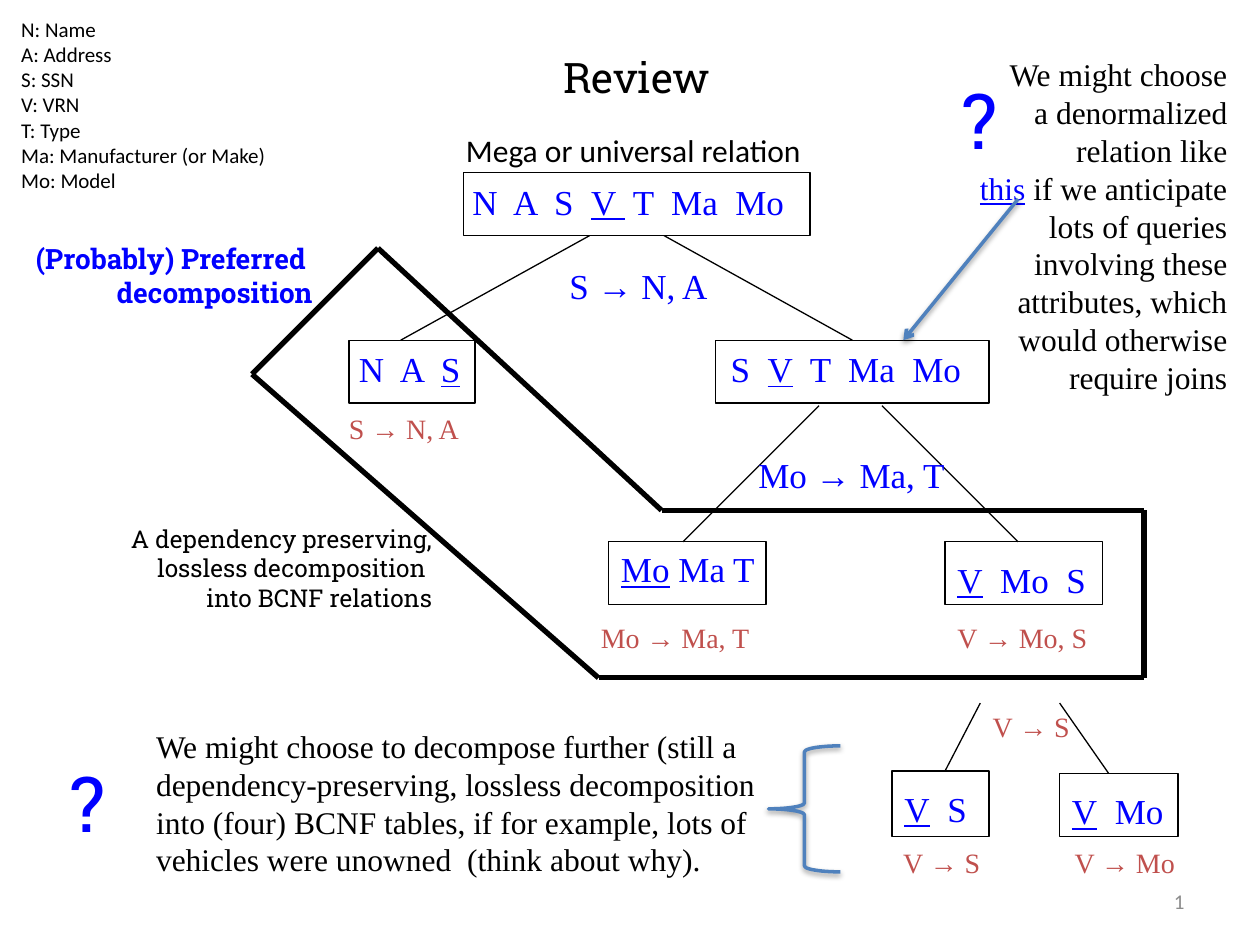
from lxml import etree
from pptx import Presentation
from pptx.dml.color import RGBColor
from pptx.enum.shapes import MSO_CONNECTOR as Connector, MSO_SHAPE as Shape
from pptx.enum.text import MSO_ANCHOR as Anchor, MSO_AUTO_SIZE as AutoSize, PP_ALIGN as Align
from pptx.oxml.ns import qn
from pptx.util import Emu, Pt

SCALE = 9144
BLACK, BLUE, RED, STEEL, GREY = "000000", "0000FF", "C0504D", "4F81BD", "8C8C8C"
SERIF, SLAB, SANS = "Times New Roman", "Roboto Slab", "Calibri"


def px(length):
    """Turn px into EMU."""
    return Emu(round(length * SCALE))


def paint(color_format, color):
    """Set a hex colour on a font colour or a line colour."""
    color_format.rgb = RGBColor.from_string(color)


def set_effect(shape, shadow=False):
    """Replace the theme shadow with a soft one or with none."""
    effects = etree.SubElement(shape._element.spPr, qn("a:effectLst"))
    if shadow:
        outer = etree.SubElement(effects, qn("a:outerShdw"), blurRad="40000",
                                 dist="20000", dir="5400000", rotWithShape="0")
        tone = etree.SubElement(outer, qn("a:srgbClr"), val=BLACK)
        etree.SubElement(tone, qn("a:alpha"), val="38000")


def add_text(slide, box, lines, size, font, color=BLACK, align=Align.LEFT,
             bold=False, wrap=False):
    """Add a text box; parts between underscores are underlined key names."""
    textbox = slide.shapes.add_textbox(*map(px, box))
    frame = textbox.text_frame
    frame.word_wrap = wrap
    frame.auto_size = AutoSize.SHAPE_TO_FIT_TEXT
    for number, line in enumerate(lines):
        paragraph = frame.add_paragraph() if number else frame.paragraphs[0]
        paragraph.alignment = align
        for part, words in enumerate(line.split("_")):
            if not words:
                continue
            run = paragraph.add_run()
            run.text = words
            is_key = part % 2 == 1
            run.font.size, run.font.name = Pt(size), font
            run.font.bold, run.font.underline = bold, is_key
            paint(run.font.color, BLUE if is_key else color)
    return textbox


def add_line(slide, start, end, color=BLACK, width=0.75, shadow=False):
    """Draw a straight connector between two points."""
    line = slide.shapes.add_connector(Connector.STRAIGHT, *map(px, (*start, *end)))
    paint(line.line.color, color)
    line.line.width = Pt(width)
    set_effect(line, shadow)
    return line


def add_outline(slide, preset, box, color=BLACK, width=0.75, shadow=False):
    """Draw an unfilled preset shape."""
    outline = slide.shapes.add_shape(preset, *map(px, box))
    outline.fill.background()
    paint(outline.line.color, color)
    outline.line.width = Pt(width)
    set_effect(outline, shadow)
    return outline


def add_relation(slide, box, attributes, dx, dy, text_width):
    """Draw a relation's rectangle with its attributes."""
    x, y, _, _ = box
    add_text(slide, (x + dx, y + dy, text_width, 43), [attributes], 20, SERIF, BLUE)
    return add_outline(slide, Shape.RECTANGLE, box)


def add_dependencies(slide, x, y, rows, size, color, height):
    """Write functional dependencies at offsets from a corner."""
    for dx, dy, width, dependency in rows:
        add_text(slide, (x + dx, y + dy, width, height), [dependency], size, SERIF, color)


def add_question_mark(slide, x, y):
    """Add a large question mark."""
    add_text(slide, (x, y, 54, 84), ["?"], 44, SLAB, BLUE)


def add_legend(slide, box):
    """List the attribute abbreviations."""
    add_text(slide, box, ["N: Name", "A: Address", "S: SSN", "V: VRN", "T: Type",
                          "Ma: Manufacturer (or Make)", "Mo: Model"], 12, SANS)


def add_decomposition_tree(slide, x, y):
    """Build the main tree of relations from its top left corner."""
    add_text(slide, (x + 93, y, 290, 40), ["Mega or universal relation"], 18, SANS)
    relations = [
        ((101, 38, 275, 50), "N  A  S  _V _ T  Ma  Mo", -3, 1, 282),
        ((10, 171, 100, 50), "N  A  _S_", -2, 1, 112),
        ((301, 171, 217, 50), "S  _V_  T  Ma  Mo", 2, 1, 214),
        ((216, 331, 125, 50), "_Mo_ Ma T", 0, 0, 130),
        ((483, 331, 125, 50), "_V_  Mo  S", 0, 8, 128),
    ]
    boxes = [add_relation(slide, (x + dx, y + dy, w, h), *label)
             for (dx, dy, w, h), *label in relations]
    edges = [((201, 88), (51, 171)), ((260, 88), (410, 171)),
             ((383, 223), (275, 331)), ((433, 223), (541, 331))]
    branches = [add_line(slide, (x + a, y + b), (x + c, y + d))
                for (a, b), (c, d) in edges]
    branches[1].end_connect(boxes[2], 0)
    add_dependencies(slide, x, y, [(175, 106, 131, "S → N, A"),
                                   (325, 256, 168, "Mo → Ma, T")], 20, BLUE, 43)
    add_dependencies(slide, x, y, [(0, 223, 108, "S → N, A"),
                                   (200, 389, 138, "Mo → Ma, T"),
                                   (483, 389, 129, "V → Mo, S")], 16, RED, 37)


def add_preferred_frame(slide, x, y):
    """Outline and label the preferred decomposition."""
    corners = [(193, 110), (468, 351), (901, 351), (901, 218), (518, 218), (293, 10)]
    for (a, b), (c, d) in zip(corners, corners[1:] + corners[:1]):
        add_line(slide, (x + a, y + b), (x + c, y + d), width=3)
    add_text(slide, (x, y, 251, 64), ["(Probably) Preferred ", "decomposition"],
             16, SLAB, BLUE, Align.RIGHT, bold=True)
    add_text(slide, (x + 80, y + 224, 266, 81),
             ["A dependency preserving,", "lossless decomposition ",
              "into BCNF relations"], 14, SLAB, align=Align.RIGHT)


def add_further_split(slide, x, y):
    """Build the optional split of the vehicle relation."""
    add_relation(slide, (x + 1, y + 54, 77, 52), "_V_  S", 0, 8, 71)
    add_relation(slide, (x + 134, y + 56, 94, 50), "_V_  Mo", 0, 8, 94)
    add_line(slide, (x + 71, y), (x + 43, y + 54))
    add_line(slide, (x + 134, y), (x + 173, y + 56))
    add_dependencies(slide, x, y, [(71, 0, 82, "V → S"), (0, 108, 82, "V → S"),
                                   (136, 108, 100, "V → Mo")], 16, RED, 37)


def add_denormalized_note(slide, x, y):
    """Write the denormalization note with its arrow."""
    add_text(slide, (x, y, 234, 283),
             ["We might choose", "a denormalized", "relation like",
              "_this_ if we anticipate lots of queries",
              "involving these attributes, which would otherwise", "require joins"],
             18, SERIF, align=Align.RIGHT, wrap=True)
    arrow = add_line(slide, (x + 58, y + 119), (x - 33, y + 231), STEEL, 2, shadow=True)
    etree.SubElement(arrow.line._get_or_add_ln(), qn("a:tailEnd"), type="arrow")
    add_question_mark(slide, x + 3, y + 14)


def add_further_note(slide, x, y):
    """Write the further decomposition note with its brace."""
    add_question_mark(slide, x, y + 23)
    add_text(slide, (x + 69, y, 508, 131),
             ["We might choose to decompose further (still a dependency-preserving, "
              "lossless decomposition into (four) BCNF tables, if for example, lots of "
              "vehicles were unowned  (think about why)."], 18, SERIF, wrap=True)
    add_outline(slide, Shape.LEFT_BRACE, (x + 565, y + 20, 57, 100), STEEL, 2, shadow=True)


def add_page_number(slide, box):
    """Write the page number."""
    number = add_text(slide, box, ["1"], 12, SANS, GREY, Align.RIGHT, wrap=True)
    number.text_frame.auto_size = AutoSize.NONE
    number.text_frame.vertical_anchor = Anchor.MIDDLE


def main():
    """Build and save the review slide."""
    deck = Presentation()
    deck.slide_width, deck.slide_height = px(1000), px(750)
    slide = deck.slides.add_slide(deck.slide_layouts[6])
    add_text(slide, (437, 36, 155, 50), ["Review"], 24, SLAB, wrap=True)
    add_legend(slide, (7, 8, 217, 151))
    add_decomposition_tree(slide, 267, 99)
    add_preferred_frame(slide, 7, 187)
    add_further_split(slide, 707, 558)
    add_denormalized_note(slide, 750, 39)
    add_further_note(slide, 45, 572)
    add_page_number(slide, (717, 695, 233, 40))
    deck.save("out.pptx")


if __name__ == "__main__":
    main()
